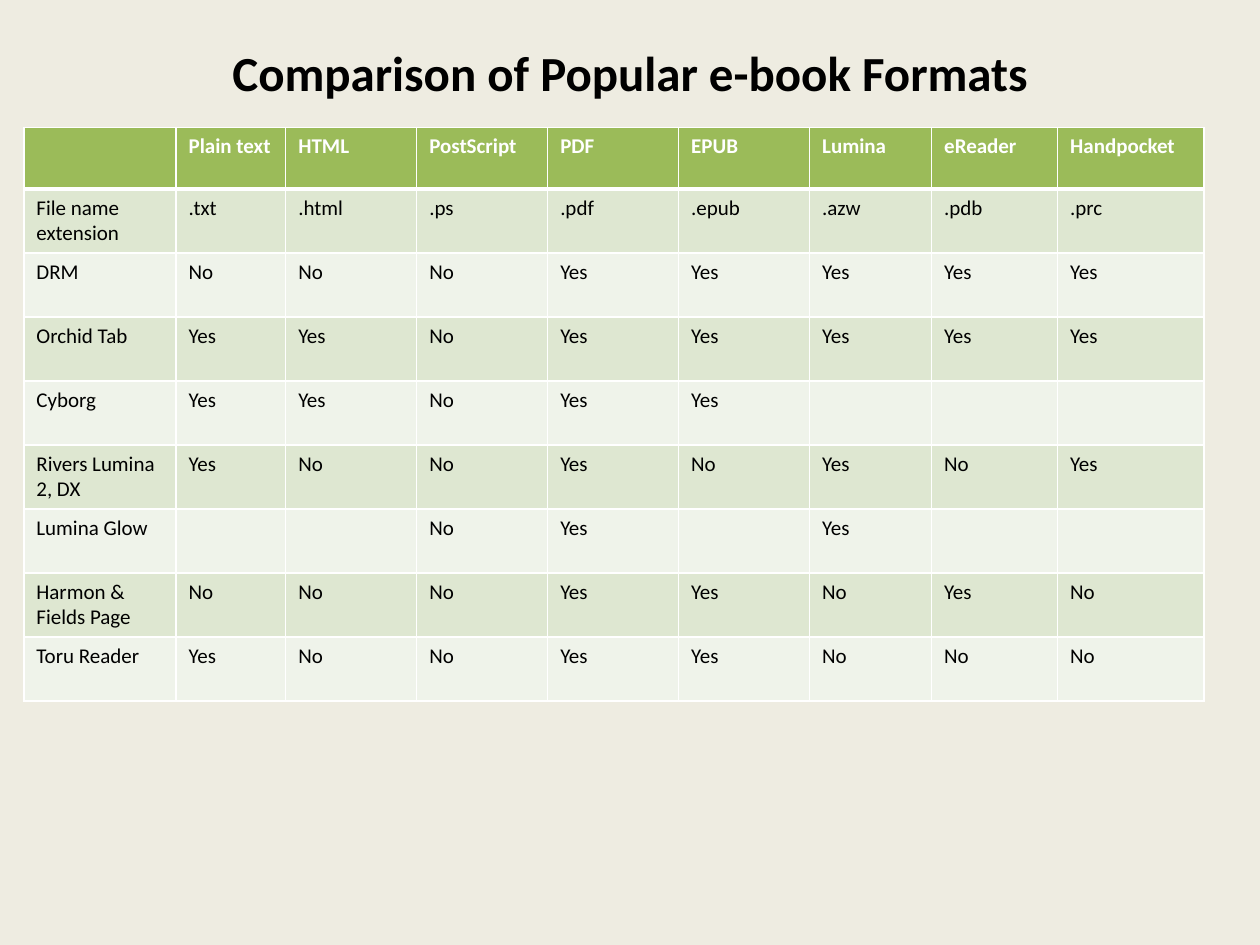
from dataclasses import dataclass

from lxml.etree import SubElement
from pptx import Presentation
from pptx.dml.color import RGBColor
from pptx.enum.text import MSO_ANCHOR, PP_ALIGN
from pptx.oxml.ns import qn
from pptx.util import Cm, Pt

FONT = "Calibri"
BLACK = RGBColor(0x00, 0x00, 0x00)
WHITE = RGBColor(0xFF, 0xFF, 0xFF)
CREAM = RGBColor(0xEE, 0xEC, 0xE1)
GREEN = RGBColor(0x9B, 0xBB, 0x59)
BAND_DARK = RGBColor(0xDE, 0xE7, 0xD1)
BAND_LIGHT = RGBColor(0xEF, 0xF3, 0xEA)

COLUMN_CM = (3.07, 2.21, 2.64, 2.64, 2.64, 2.64, 2.46, 2.54, 2.95)
HEADER_CM, BODY_CM = 1.24, 1.29
THIN, THICK = 1, 3


@dataclass(frozen=True)
class Row:
    label: str
    values: tuple[str, ...]


def support(label: str, marks: str) -> Row:
    """One letter per format: Y for yes, N for no, - for an empty cell."""
    words = {"Y": "Yes", "N": "No", "-": ""}
    return Row(label, tuple(words[m] for m in marks))


ROWS = (
    Row("", ("Plain text", "HTML", "PostScript", "PDF", "EPUB",
             "Lumina", "eReader", "Handpocket")),
    Row("File name extension", (".txt", ".html", ".ps", ".pdf", ".epub",
                                ".azw", ".pdb", ".prc")),
    support("DRM", "NNNYYYYY"),
    support("Orchid Tab", "YYNYYYYY"),
    support("Cyborg", "YYNYY---"),
    support("Rivers Lumina 2, DX", "YNNYNYNY"),
    support("Lumina Glow", "--NY-Y--"),
    support("Harmon & Fields Page", "NNNYYNYN"),
    support("Toru Reader", "YNNYYNNN"),
)


def add_run(p, text: str, size: int, color: RGBColor, bold: bool) -> None:
    r = p.add_run()
    r.text = text
    r.font.name = FONT
    r.font.size = Pt(size)
    r.font.bold = bold
    r.font.color.rgb = color


def set_borders(cell, top: int, bottom: int) -> None:
    tc_pr = cell._tc.get_or_add_tcPr()
    widths = {"a:lnL": THIN, "a:lnR": THIN, "a:lnT": top, "a:lnB": bottom}
    for i, (tag, width) in enumerate(widths.items()):
        ln = SubElement(tc_pr, qn(tag), w=str(Pt(width)))
        fill = SubElement(ln, qn("a:solidFill"))
        SubElement(fill, qn("a:srgbClr"), val=str(WHITE))
        tc_pr.insert(i, ln)  # borders come before the cell fill


def add_title(s, text: str) -> None:
    sp = s.shapes.title
    sp.left, sp.top, sp.width, sp.height = Cm(1.27), Cm(0.76), Cm(22.86), Cm(1.37)
    tf = sp.text_frame
    tf.vertical_anchor = MSO_ANCHOR.MIDDLE
    p = tf.paragraphs[0]
    p.alignment = PP_ALIGN.CENTER
    add_run(p, text, 28, BLACK, True)


def add_format_table(s, rows: tuple[Row, ...]) -> None:
    height = HEADER_CM + BODY_CM * (len(rows) - 1)
    table = s.shapes.add_table(len(rows), len(COLUMN_CM), Cm(0.48), Cm(2.57),
                               Cm(sum(COLUMN_CM)), Cm(height)).table
    for column, width in zip(table.columns, COLUMN_CM):
        column.width = Cm(width)
    for i, row in enumerate(rows):
        header = i == 0
        table.rows[i].height = Cm(HEADER_CM if header else BODY_CM)
        band = GREEN if header else BAND_DARK if i % 2 else BAND_LIGHT
        for j, text in enumerate((row.label, *row.values)):
            cell = table.cell(i, j)
            cell.fill.solid()
            cell.fill.fore_color.rgb = band
            set_borders(cell, THICK if i == 1 else THIN, THICK if header else THIN)
            if text:
                add_run(cell.text_frame.paragraphs[0], text, 12,
                        WHITE if header else BLACK, header)


def main() -> None:
    prs = Presentation()
    prs.slide_width, prs.slide_height = Cm(25.4), Cm(19.05)
    s = prs.slides.add_slide(prs.slide_layouts[5])

    # Background
    s.background.fill.solid()
    s.background.fill.fore_color.rgb = CREAM

    # Title and comparison table
    add_title(s, "Comparison of Popular e-book Formats")
    add_format_table(s, ROWS)

    prs.save("out.pptx")


if __name__ == "__main__":
    main()
